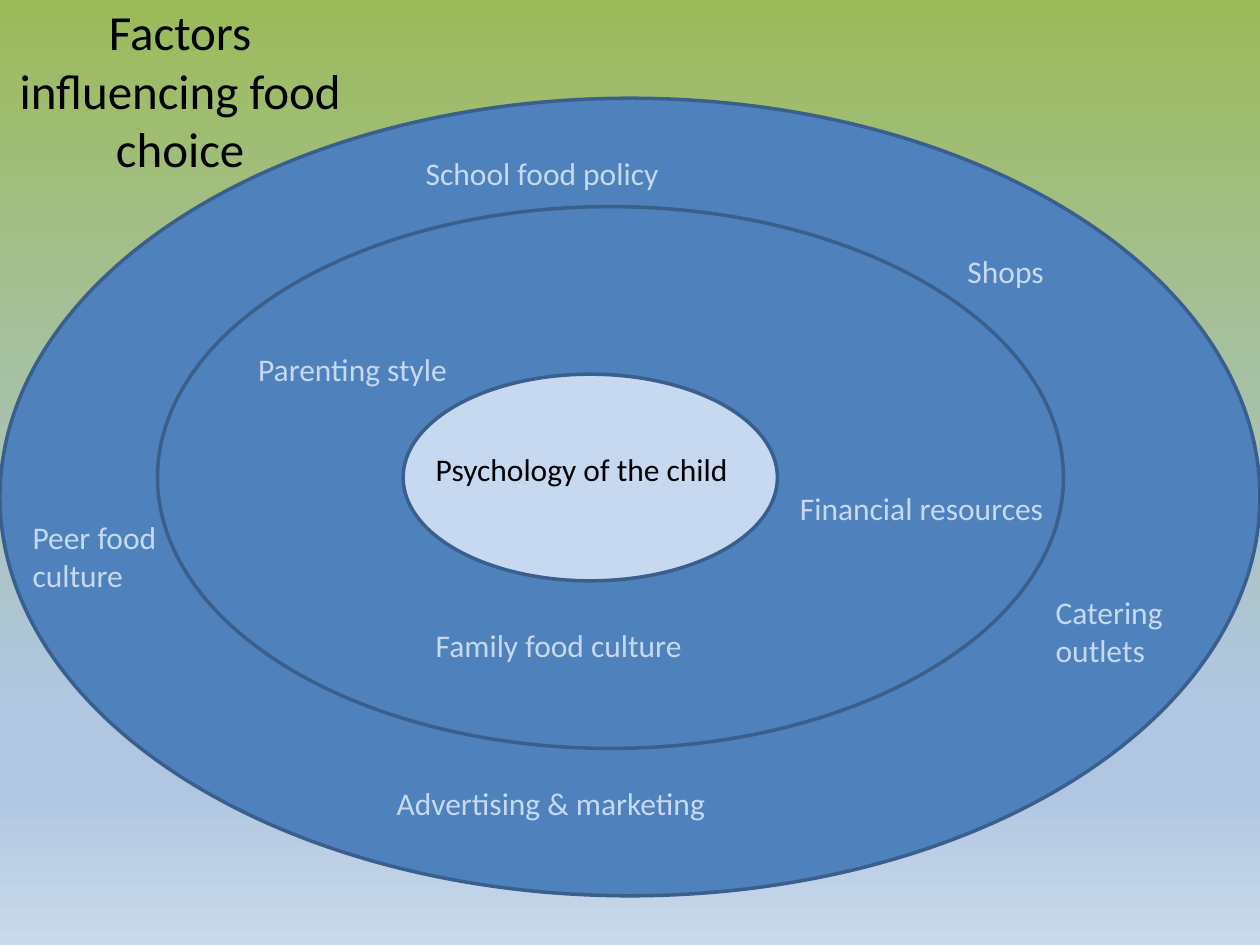
from copy import deepcopy

from pptx import Presentation
from pptx.dml.color import RGBColor
from pptx.enum.shapes import MSO_SHAPE
from pptx.enum.text import MSO_ANCHOR, MSO_AUTO_SIZE, PP_ALIGN
from pptx.oxml.ns import qn
from pptx.util import Inches, Pt

BLUE = "4F81BD"
PALE_BLUE = "C6D9F1"
OUTLINE = "3A5F8C"
BLACK = "000000"


def color(hex_string):
    return RGBColor.from_string(hex_string)


def format_text(shape, text, size, text_color):
    shape.text_frame.text = text
    shape.text_frame.word_wrap = True
    font = shape.text_frame.paragraphs[0].runs[0].font
    font.name = "Calibri"
    font.size = Pt(size)
    font.color.rgb = color(text_color)


presentation = Presentation()
presentation.slide_width = Inches(10)
presentation.slide_height = Inches(7.5)
slide = presentation.slides.add_slide(presentation.slide_layouts[5])

# Background gradient, green at the top to pale blue at the bottom
gradient_stops = [(0, "9BBB59"), (0.74, "B0C6E1"), (0.83, "B0C6E1"), (1, "CAD9EB")]
background_fill = slide.background.fill
background_fill.gradient()
background_fill.gradient_angle = 270
stop_list = slide.element.find(".//" + qn("a:gsLst"))
while len(stop_list) < len(gradient_stops):
    stop_list.append(deepcopy(stop_list[0]))
for stop, (position, stop_color) in zip(background_fill.gradient_stops, gradient_stops):
    stop.position = position
    stop.color.rgb = color(stop_color)

# Nested ellipses, from society through family to the child
ellipses = [
    (0, 0.78, 10, 6.33, BLUE),
    (1.25, 1.64, 7.19, 4.3, BLUE),
    (3.2, 2.97, 2.97, 1.64, PALE_BLUE),
]
for left, top, width, height, fill_color in ellipses:
    ellipse = slide.shapes.add_shape(
        MSO_SHAPE.OVAL, Inches(left), Inches(top), Inches(width), Inches(height))
    ellipse.shadow.inherit = False
    ellipse.fill.solid()
    ellipse.fill.fore_color.rgb = color(fill_color)
    ellipse.line.color.rgb = color(OUTLINE)
    ellipse.line.width = Pt(2)

# Title, brought in front of the ellipses
title = slide.shapes.title
title.left, title.top = Inches(0), Inches(0)
title.width, title.height = Inches(2.86), Inches(1.42)
format_text(title, "Factors influencing food choice", 28, BLACK)
title.text_frame.vertical_anchor = MSO_ANCHOR.MIDDLE
title.text_frame.paragraphs[0].alignment = PP_ALIGN.CENTER
title.element.getparent().append(title.element)

# Factor labels
labels = [
    ("Psychology of the child", 3.36, 3.52, 3.12, 0.4, BLACK),
    ("Parenting style", 1.95, 2.73, 3.91, 0.4, PALE_BLUE),
    ("Family food culture", 3.36, 4.92, 3.12, 0.4, PALE_BLUE),
    ("Financial resources", 6.25, 3.83, 2.58, 0.4, PALE_BLUE),
    ("Advertising & marketing", 3.05, 6.17, 3.44, 0.4, PALE_BLUE),
    ("School food policy", 3.28, 1.17, 2.89, 0.4, PALE_BLUE),
    ("Peer food culture", 0.16, 4.06, 1.88, 0.71, PALE_BLUE),
    ("Shops", 7.58, 1.95, 1.41, 0.4, PALE_BLUE),
    ("Catering outlets", 8.28, 4.66, 1.41, 0.71, PALE_BLUE),
]
for text, left, top, width, height, text_color in labels:
    label = slide.shapes.add_textbox(
        Inches(left), Inches(top), Inches(width), Inches(height))
    format_text(label, text, 18, text_color)
    label.text_frame.auto_size = MSO_AUTO_SIZE.SHAPE_TO_FIT_TEXT
    if text == "Peer food culture":
        label.text_frame.margin_right = Inches(0.6)

presentation.save("out.pptx")
